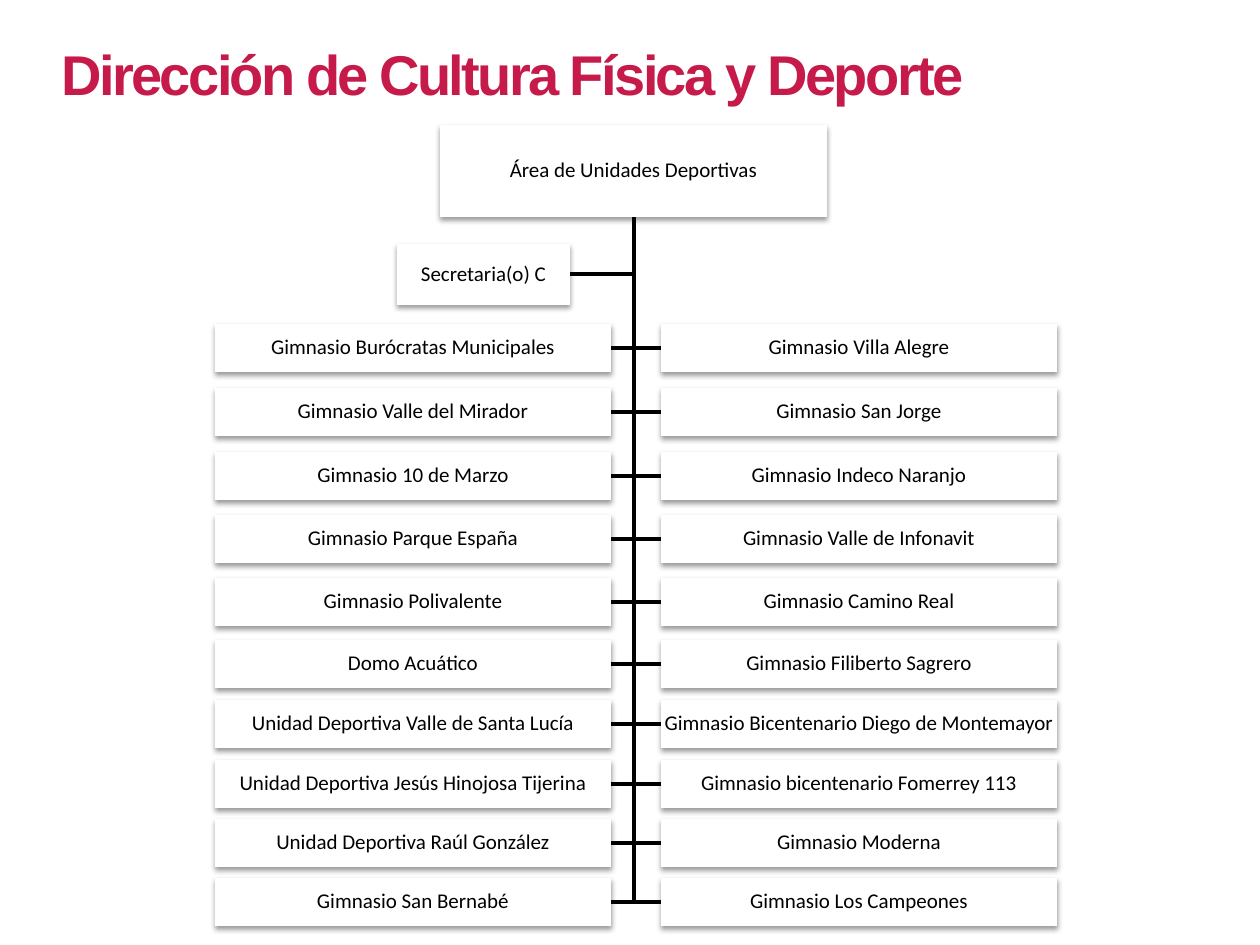
from lxml import etree
from pptx import Presentation
from pptx.dml.color import RGBColor
from pptx.enum.shapes import MSO_SHAPE
from pptx.enum.text import MSO_ANCHOR, MSO_AUTO_SIZE, PP_ALIGN
from pptx.oxml.ns import qn
from pptx.util import Inches, Pt

PX = Inches(1) / 126
RECT = MSO_SHAPE.RECTANGLE
LEFT, CENTER = PP_ALIGN.LEFT, PP_ALIGN.CENTER
TOP, MIDDLE = MSO_ANCHOR.TOP, MSO_ANCHOR.MIDDLE
GROW = MSO_AUTO_SIZE.SHAPE_TO_FIT_TEXT

RED = RGBColor(0xC5, 0x1A, 0x4A)
BLACK = RGBColor(0, 0, 0)
WHITE = RGBColor(0xFF, 0xFF, 0xFF)

TITLE = "Dirección de Cultura Física y Deporte"
AREA = "Área de Unidades Deportivas"
CLERK = "Secretaria(o) C"
# Top of each row within the chart, then its left and right units
ROWS = [
    (199, "Gimnasio Burócratas Municipales", "Gimnasio Villa Alegre"),
    (263, "Gimnasio Valle del Mirador", "Gimnasio San Jorge"),
    (327, "Gimnasio 10 de Marzo", "Gimnasio Indeco Naranjo"),
    (390, "Gimnasio Parque España", "Gimnasio Valle de Infonavit"),
    (453, "Gimnasio Polivalente", "Gimnasio Camino Real"),
    (515, "Domo Acuático", "Gimnasio Filiberto Sagrero"),
    (575, "Unidad Deportiva Valle de Santa Lucía",
     "Gimnasio Bicentenario Diego de Montemayor"),
    (635, "Unidad Deportiva Jesús Hinojosa Tijerina",
     "Gimnasio bicentenario Fomerrey 113"),
    (694, "Unidad Deportiva Raúl González", "Gimnasio Moderna"),
    (753, "Gimnasio San Bernabé", "Gimnasio Los Campeones"),
]


def px(*sizes):
    return [round(size * PX) for size in sizes]


def write(shape, text, font="Calibri", size=12, color=BLACK, bold=False,
          align=CENTER, anchor=MIDDLE, inset=1, lead=None, track=0):
    frame = shape.text_frame
    frame.word_wrap = True
    frame.vertical_anchor = anchor
    if inset is not None:
        frame.margin_left, frame.margin_right = px(inset, inset)
        frame.margin_top, frame.margin_bottom = px(inset, inset)
    para = frame.paragraphs[0]
    para.alignment = align
    if lead:
        para.line_spacing = lead
    run = para.add_run()
    run.text = text
    run.font.name = font
    run.font.size = Pt(size)
    run.font.bold = bold
    run.font.color.rgb = color
    if track:
        run.font._element.set("spc", str(round(track * 100)))


def shade(shape):
    """Give the shape a soft shadow below it."""
    shape.shadow.inherit = False
    effects = shape._element.spPr.find(qn("a:effectLst"))
    outer = etree.SubElement(
        effects, qn("a:outerShdw"), blurRad=str(Pt(3.1)), dist=str(Pt(1.6)),
        dir="5400000", algn="t", rotWithShape="0")
    tint = etree.SubElement(outer, qn("a:srgbClr"), val=str(BLACK))
    etree.SubElement(tint, qn("a:alpha"), val="38000")


def card(slide, text, x, y, w, h):
    shape = slide.shapes.add_shape(RECT, *px(x, y, w, h))
    shape.fill.solid()
    shape.fill.fore_color.rgb = WHITE
    shape.line.fill.background()
    shade(shape)
    write(shape, text, lead=0.9)


def elbow(slide, x, y, end_x, end_y):
    """Draw a line down from x, y and then across to the end."""
    path = slide.shapes.build_freeform(x, y, scale=PX)
    path.add_line_segments([(x, end_y), (end_x, end_y)], close=False)
    line = path.convert_to_shape()
    line.fill.background()
    line.line.color.rgb = BLACK
    line.line.width = Pt(2)
    line.shadow.inherit = False


def title(slide, x, y, w, h):
    box = slide.shapes.add_textbox(*px(x, y, w, h))
    write(box, TITLE, font="Arial", size=32, color=RED, bold=True,
          align=LEFT, anchor=TOP, inset=None, track=-1.5)
    box.text_frame.auto_size = GROW


def chart(slide, x, y, w):
    """Draw the head, its clerk and two columns of units."""
    unit_w, unit_h = 396, 48
    head_w, head_h = 387, 92
    clerk_w, clerk_h = 173, 61
    trunk, base = x + 419, y + head_h
    clerk_x, clerk_y = x + 182, y + 119
    left, right = x, x + w - unit_w

    elbow(slide, trunk, base, clerk_x + clerk_w, clerk_y + clerk_h // 2)
    for top, _, _ in reversed(ROWS):
        for edge in (right, left + unit_w):
            elbow(slide, trunk, base, edge, y + top + unit_h // 2)

    card(slide, AREA, trunk - head_w // 2 - 1, y, head_w, head_h)
    for top, *names in ROWS:
        for col, name in zip((left, right), names):
            card(slide, name, col, y + top, unit_w, unit_h)
    card(slide, CLERK, clerk_x, clerk_y, clerk_w, clerk_h)


def main():
    deck = Presentation()
    deck.slide_width, deck.slide_height = px(1260, 945)
    slide = deck.slides.add_slide(deck.slide_layouts[6])
    title(slide, 49, 33, 969, 81)
    chart(slide, 215, 125, 842)
    deck.save("out.pptx")


if __name__ == "__main__":
    main()
